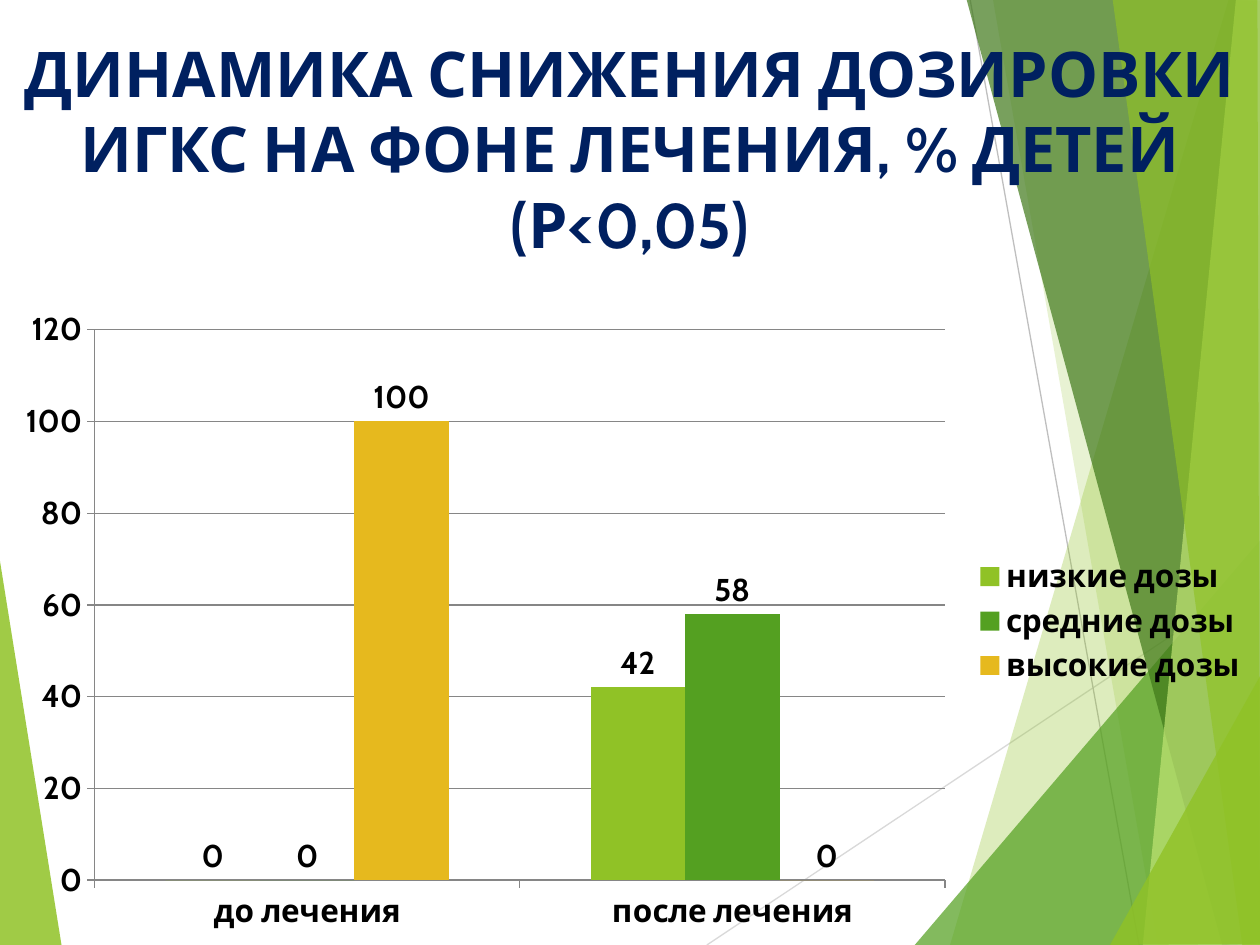
from lxml import etree
from pptx import Presentation
from pptx.chart.data import CategoryChartData
from pptx.dml.color import RGBColor
from pptx.enum.chart import XL_CHART_TYPE, XL_LABEL_POSITION, XL_LEGEND_POSITION, XL_TICK_MARK
from pptx.enum.shapes import MSO_CONNECTOR
from pptx.enum.text import MSO_ANCHOR, PP_ALIGN
from pptx.oxml.ns import qn
from pptx.util import Inches, Pt

COLUMNS = XL_CHART_TYPE.COLUMN_CLUSTERED
OUTSIDE = XL_LABEL_POSITION.OUTSIDE_END
RIGHT = XL_LEGEND_POSITION.RIGHT
CROSS = XL_TICK_MARK.CROSS
OUT = XL_TICK_MARK.OUTSIDE
STRAIGHT = MSO_CONNECTOR.STRAIGHT

# Content
FONT = "Cabin"
TITLE = "ДИНАМИКА СНИЖЕНИЯ ДОЗИРОВКИ ИГКС НА ФОНЕ ЛЕЧЕНИЯ, % ДЕТЕЙ (Р<0,05)"
CATEGORIES = ["до лечения", "после лечения"]
SERIES = [
    ("низкие дозы", (0, 42), "90C226"),
    ("средние дозы", (0, 58), "54A021"),
    ("высокие дозы", (100, 0), "E6B91E"),
]
TITLE_BOX = (0, 0.23, 10, 1.88)
CHART_BOX = (0, 2.36, 10, 5.14)
PLOT = {"x": 0.075, "y": 0.05, "w": 0.675, "h": 0.85}  # shares of the chart box

# Backdrop: points, colour, opacity in percent
LEFT_FACET = ([(-0.01, 4.39), (0.49, 7.51), (-0.01, 7.5)], "90C226", 85)
LINES = [
    ((5.61, 7.5), (10.01, 4.57), "D9D9D9"),
    ((7.7, 0), (9.04, 7.5), "BFBFBF"),
]
RIGHT_FACETS = [
    ([(9.75, 0), (7.54, 7.5), (10.02, 7.51), (10.01, 0.01)], "90C226", 30),
    ([(7.88, -0.01), (9.19, 7.5), (10.01, 7.5), (10.01, -0.01)], "90C226", 20),
    ([(7.26, 7.5), (10, 4.29), (10.01, 7.5)], "54A021", 72),
    ([(7.67, -0.01), (9.7, 7.5), (10.01, 7.49), (10.01, -0.01)], "3F7819", 70),
    ([(9.81, -0.01), (9.07, 7.5), (10.01, 7.5), (10, -0.01)], "C0E474", 70),
    ([(8.83, -0.01), (9.86, 7.5), (10, 7.5), (9.98, -0.01)], "90C226", 65),
    ([(8.81, 7.5), (10.01, 5.35), (10.01, 7.49)], "90C226", 80),
]


def rgb(value):
    return RGBColor.from_string(value)


def set_font(font, size, color):
    values = {"name": FONT, "size": Pt(size), "bold": True}
    for name, value in values.items():
        setattr(font, name, value)
    font.color.rgb = rgb(color)


def add_facet(s, points, color, opacity):
    start, *rest = [(Inches(x), Inches(y)) for x, y in points]
    builder = s.shapes.build_freeform(*start)
    builder.add_line_segments(rest, close=True)
    sp = builder.convert_to_shape()
    sp.shadow.inherit = False
    sp.line.fill.background()
    sp.fill.solid()
    sp.fill.fore_color.rgb = rgb(color)
    clr = sp.fill._xPr.find(qn("a:solidFill"))[0]
    etree.SubElement(clr, qn("a:alpha"), val=str(opacity * 1000))


def add_rule(s, start, end, color):
    line = s.shapes.add_connector(STRAIGHT, *map(Inches, start + end))
    line.line.color.rgb = rgb(color)
    line.line.width = Pt(0.75)
    etree.SubElement(line._element.spPr, qn("a:effectLst"))


def add_title(s):
    tf = s.shapes.add_textbox(*map(Inches, TITLE_BOX)).text_frame
    tf.word_wrap = True
    tf.vertical_anchor = MSO_ANCHOR.MIDDLE
    p = tf.paragraphs[0]
    p.alignment = PP_ALIGN.CENTER
    r = p.add_run()
    r.text = TITLE
    set_font(r.font, 36, "002060")


def place_plot(chart):
    area = chart._chartSpace.chart.plotArea
    for old in area.findall(qn("c:layout")):
        area.remove(old)
    layout = etree.Element(qn("c:layout"))
    area.insert(0, layout)
    manual = etree.SubElement(layout, qn("c:manualLayout"))
    settings = {"layoutTarget": "inner", "xMode": "edge", "yMode": "edge", **PLOT}
    for tag, value in settings.items():
        etree.SubElement(manual, qn("c:" + tag), val=str(value))


def add_dose_chart(s):
    data = CategoryChartData()
    data.categories = CATEGORIES
    for name, values, _ in SERIES:
        data.add_series(name, values)
    chart = s.shapes.add_chart(COLUMNS, *map(Inches, CHART_BOX), data).chart
    set_font(chart.font, 18, "000000")
    chart.has_title = False
    chart.has_legend = True
    chart.legend.position = RIGHT
    chart.legend.include_in_layout = False
    set_font(chart.legend.font, 18, "000000")

    # Axes and gridlines
    value_axis, category_axis = chart.value_axis, chart.category_axis
    value_axis.has_major_gridlines = True
    value_axis.minimum_scale, value_axis.maximum_scale = 0, 120
    value_axis.major_unit = 20
    for axis in (value_axis, category_axis):
        axis.major_tick_mark = OUT
        set_font(axis.tick_labels.font, 18, "000000")
    for part in (value_axis, category_axis, value_axis.major_gridlines):
        part.format.line.color.rgb = rgb("868686")
        part.format.line.width = Pt(0.75)

    # Columns and their labels
    plot = chart.plots[0]
    plot.vary_by_categories = False
    plot.gap_width, plot.overlap = 150, 0
    for series, (_, _, color) in zip(plot.series, SERIES):
        series.invert_if_negative = False
        series.format.fill.solid()
        series.format.fill.fore_color.rgb = rgb(color)
        labels = series.data_labels
        labels.show_value = True
        labels.position = OUTSIDE
        set_font(labels.font, 18, "000000")
    place_plot(chart)


def main():
    prs = Presentation()
    prs.slide_width, prs.slide_height = Inches(10), Inches(7.5)
    s = prs.slides.add_slide(prs.slide_layouts[6])
    s.background.fill.solid()
    s.background.fill.fore_color.rgb = rgb("FFFFFF")

    add_facet(s, *LEFT_FACET)
    for line in LINES:
        add_rule(s, *line)
    for facet in RIGHT_FACETS:
        add_facet(s, *facet)
    add_title(s)
    add_dose_chart(s)
    prs.save("out.pptx")


if __name__ == "__main__":
    main()
